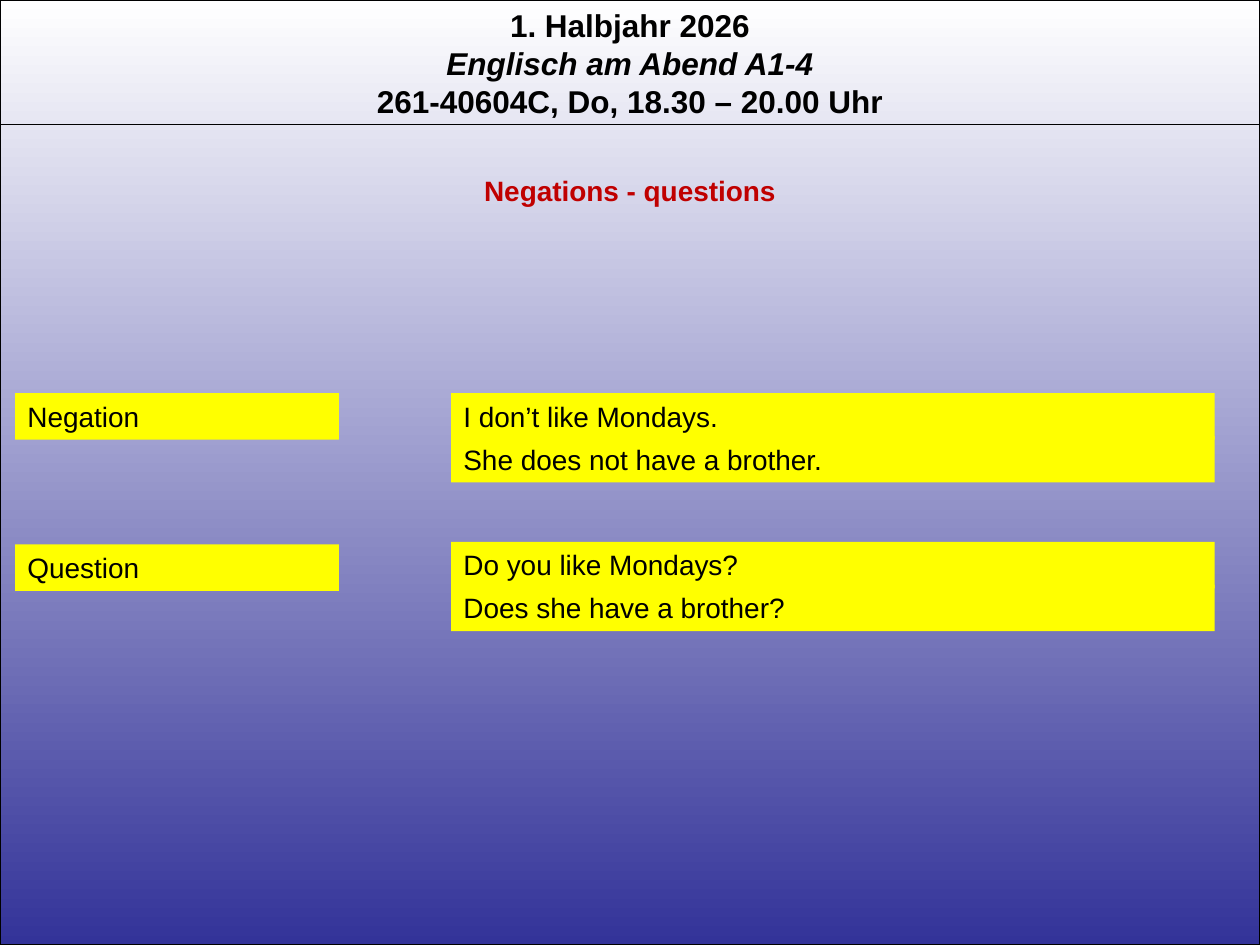
from dataclasses import dataclass

from lxml import etree
from pptx import Presentation
from pptx.dml.color import RGBColor
from pptx.enum import shapes, text
from pptx.oxml.ns import qn
from pptx.util import Inches, Pt

COURSE = [  # (line, italic)
    ("1. Halbjahr 2026", False),
    ("Englisch am Abend A1-4", True),
    ("261-40604C, Do, 18.30 – 20.00 Uhr", False),
]
TOPIC = "Negations - questions"
GRAMMAR = [  # label, its top, examples, their top
    ("Negation", 3.12, ["I don’t like Mondays.", "She does not have a brother."], 3.12),
    ("Question", 4.32, ["Do you like Mondays?", "Does she have a brother?"], 4.3),
]

WIDTH, HEIGHT = 10, 7.5
RULE_Y = 0.99
LABEL_COLUMN = (0.12, 2.57)  # left, width
EXAMPLE_COLUMN = (3.58, 6.06)
ROW_HEIGHT, ROW_STEP = 0.37, 0.34


@dataclass(frozen=True)
class Theme:
    font: str = "Arial"
    ink: RGBColor = RGBColor(0, 0, 0)
    topic: RGBColor = RGBColor(0xC0, 0, 0)
    marker: RGBColor = RGBColor(0xFF, 0xFF, 0)
    sky_top: RGBColor = RGBColor(0xFF, 0xFF, 0xFF)
    sky_bottom: RGBColor = RGBColor(0x33, 0x33, 0x99)
    header_size: int = 18
    body_size: int = 16
    line_width: float = 0.75


THEME = Theme()


def write(shape, lines, size, color, align, bold=False):
    """Fill a shape with (line, italic) paragraphs."""
    frame = shape.text_frame
    frame.word_wrap = True
    frame.auto_size = text.MSO_AUTO_SIZE.SHAPE_TO_FIT_TEXT
    frame.vertical_anchor = text.MSO_ANCHOR.TOP
    frame.text = "\n".join(line for line, _ in lines)
    for paragraph, (_, italic) in zip(frame.paragraphs, lines):
        paragraph.alignment = align
        font = paragraph.font
        font.name, font.size, font.color.rgb = THEME.font, Pt(size), color
        font.bold, font.italic = bold, italic


def add_rectangle(slide, left, top, width, height):
    rectangle = slide.shapes.add_shape(
        shapes.MSO_SHAPE.RECTANGLE, *map(Inches, (left, top, width, height)))
    rectangle.shadow.inherit = False
    return rectangle


def outline(line):
    line.color.rgb = THEME.ink
    line.width = Pt(THEME.line_width)


def add_backdrop(slide):
    backdrop = add_rectangle(slide, 0, 0, WIDTH, HEIGHT)
    backdrop.fill.gradient()
    backdrop.fill.gradient_angle = 270
    colors = (THEME.sky_top, THEME.sky_bottom)
    for position, (stop, color) in enumerate(zip(backdrop.fill.gradient_stops, colors)):
        stop.position = position
        stop.color.rgb = color
    outline(backdrop.line)


def add_header(slide):
    header = slide.shapes.add_textbox(0, 0, Inches(WIDTH), Inches(1.01))
    write(header, COURSE, THEME.header_size, THEME.ink, text.PP_ALIGN.CENTER, bold=True)
    rule = slide.shapes.add_connector(
        shapes.MSO_CONNECTOR.STRAIGHT, 0, Inches(RULE_Y), Inches(WIDTH), Inches(RULE_Y))
    outline(rule.line)
    etree.SubElement(rule.element.spPr, qn("a:effectLst"))


def place_topic(slide):
    topic = slide.shapes.title
    topic.element.getparent().append(topic.element)  # bring in front of the backdrop
    topic.left, topic.top = 0, Inches(1.33)
    topic.width, topic.height = Inches(WIDTH), Inches(ROW_HEIGHT)
    write(topic, [(TOPIC, False)], THEME.body_size, THEME.topic,
          text.PP_ALIGN.CENTER, bold=True)


def add_marker(slide, words, column, top):
    left, width = column
    marker = add_rectangle(slide, left, top, width, ROW_HEIGHT)
    marker.fill.solid()
    marker.fill.fore_color.rgb = THEME.marker
    marker.line.fill.background()
    write(marker, [(words, False)], THEME.body_size, THEME.ink, text.PP_ALIGN.LEFT)


def main():
    deck = Presentation()
    deck.slide_width, deck.slide_height = Inches(WIDTH), Inches(HEIGHT)
    slide = deck.slides.add_slide(deck.slide_layouts.get_by_name("Title Only"))
    add_backdrop(slide)
    add_header(slide)
    place_topic(slide)
    for label, label_top, examples, examples_top in GRAMMAR:
        add_marker(slide, label, LABEL_COLUMN, label_top)
        for row, example in enumerate(examples):
            add_marker(slide, example, EXAMPLE_COLUMN, examples_top + row * ROW_STEP)
    deck.save("out.pptx")


if __name__ == "__main__":
    main()
